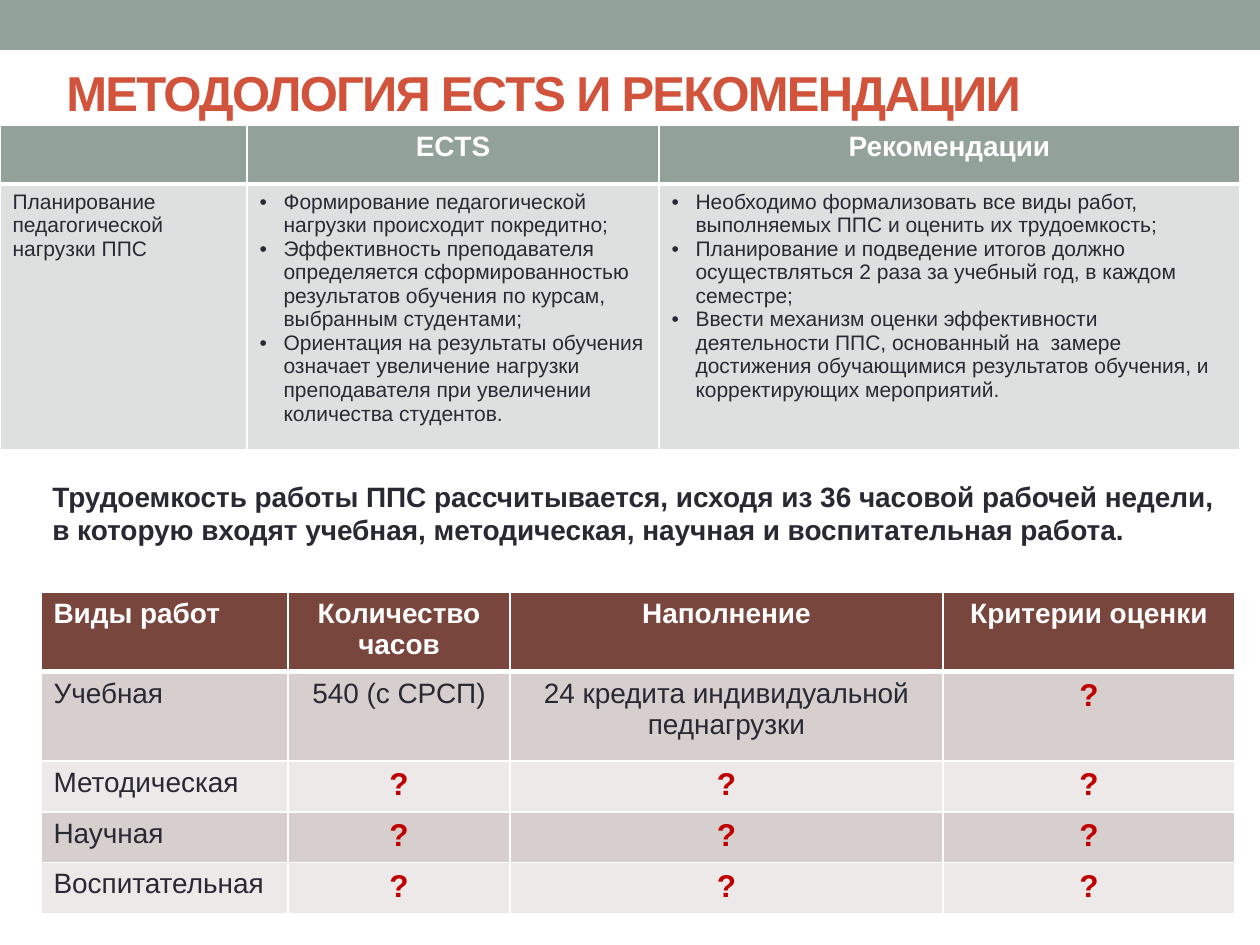
from lxml import etree
from pptx import Presentation
from pptx.dml.color import RGBColor
from pptx.enum.shapes import MSO_SHAPE
from pptx.enum.text import MSO_ANCHOR, PP_ALIGN
from pptx.oxml.ns import qn
from pptx.util import Pt

RECT = MSO_SHAPE.RECTANGLE
MIDDLE, TOP = MSO_ANCHOR.MIDDLE, MSO_ANCHOR.TOP
LEFT, CENTER = PP_ALIGN.LEFT, PP_ALIGN.CENTER

WHITE = RGBColor(0xFF, 0xFF, 0xFF)
SAGE = RGBColor(0x93, 0xA2, 0x99)
MIST = RGBColor(0xDC, 0xE0, 0xDE)
INK = RGBColor(0x29, 0x29, 0x34)
RUST = RGBColor(0xD2, 0x53, 0x3C)
BROWN = RGBColor(0x79, 0x46, 0x3D)
ROSE = RGBColor(0xD7, 0xCF, 0xCE)
PALE = RGBColor(0xEC, 0xE9, 0xE8)
RED = RGBColor(0xC0, 0x00, 0x00)

PX = 914400 / 126

# Font formats
BASE = {"name": "Arial", "size": Pt(16), "bold": False, "color": INK}
TITLE = {**BASE, "size": Pt(28), "bold": True, "color": RUST}
HEAD = {**BASE, "bold": True, "color": WHITE}
SMALL = {**BASE, "size": Pt(12)}
NOTE = {**BASE, "bold": True}
MARK = {**BASE, "size": Pt(18), "bold": True, "color": RED}

PLAN = [
    ["", "ECTS", "Рекомендации"],
    ["Планирование педагогической нагрузки ППС",
     ["Формирование педагогической нагрузки происходит покредитно;",
      "Эффективность преподавателя определяется сформированностью "
      "результатов обучения по курсам, выбранным студентами;",
      "Ориентация на результаты обучения означает увеличение нагрузки "
      "преподавателя при увеличении количества студентов."],
     ["Необходимо формализовать все виды работ, выполняемых ППС и оценить "
      "их трудоемкость;",
      "Планирование и подведение итогов должно осуществляться 2 раза за "
      "учебный год, в каждом семестре;",
      "Ввести механизм оценки эффективности деятельности ППС, основанный на  "
      "замере достижения обучающимися результатов обучения, и "
      "корректирующих мероприятий."]],
]
WORK = [
    ["Виды работ", "Количество часов", "Наполнение", "Критерии оценки"],
    ["Учебная", "540 (с СРСП)", "24 кредита индивидуальной педнагрузки", "?"],
    *[[kind, "?", "?", "?"]
      for kind in ("Методическая", "Научная", "Воспитательная")],
]


def px(*sizes):
    return [round(size * PX) for size in sizes]


def write(para, text, style, align=LEFT):
    para.alignment = align
    run = para.add_run()
    run.text = text
    for key, value in style.items():
        if key == "color":
            run.font.color.rgb = value
        else:
            setattr(run.font, key, value)
    return run


def bullet(para):
    props = para._p.get_or_add_pPr()
    indent = px(24)[0]
    props.set("marL", str(indent))
    props.set("indent", str(-indent))
    etree.SubElement(props, qn("a:buFont")).set("typeface", "Arial")
    etree.SubElement(props, qn("a:buChar")).set("char", "•")


def border(cell, base):
    """Draw white cell lines, with the bottom one of the given width."""
    props = cell._tc.get_or_add_tcPr()
    widths = {"a:lnL": 1, "a:lnR": 1, "a:lnT": 1, "a:lnB": base}
    for spot, (tag, width) in enumerate(widths.items()):
        line = etree.Element(qn(tag), w=str(Pt(width)))
        fill = etree.SubElement(line, qn("a:solidFill"))
        etree.SubElement(fill, qn("a:srgbClr")).set("val", str(WHITE))
        props.insert(spot, line)


def band(slide, box):
    bar = slide.shapes.add_shape(RECT, *px(*box))
    bar.shadow.inherit = False
    bar.fill.solid()
    bar.fill.fore_color.rgb = SAGE
    bar.line.fill.background()


def label(slide, box, text, style, anchor=TOP):
    frame = slide.shapes.add_textbox(*px(*box)).text_frame
    frame.word_wrap = True
    frame.vertical_anchor = anchor
    return write(frame.paragraphs[0], text, style)


def grid(slide, spot, cols, rows, data, fills, body):
    """Build a table with a header row; fills holds one colour per row."""
    box = px(*spot, sum(cols), sum(rows))
    table = slide.shapes.add_table(len(rows), len(cols), *box).table
    for part, sizes in ((table.columns, cols), (table.rows, rows)):
        key = "width" if part is table.columns else "height"
        for item, size in zip(part, px(*sizes)):
            setattr(item, key, size)
    for r, line in enumerate(data):
        for c, entry in enumerate(line):
            cell = table.cell(r, c)
            cell.fill.solid()
            cell.fill.fore_color.rgb = fills[r]
            border(cell, 1 if r else 3)
            style = HEAD if r == 0 else MARK if entry == "?" else body
            frame = cell.text_frame
            if isinstance(entry, list):
                for i, text in enumerate(entry):
                    para = frame.add_paragraph() if i else frame.paragraphs[0]
                    write(para, text, style)
                    bullet(para)
            elif entry:
                align = CENTER if c else LEFT
                write(frame.paragraphs[0], entry, style, align)


def main():
    deck = Presentation()
    deck.slide_width, deck.slide_height = px(1260, 945)
    slide = deck.slides.add_slide(deck.slide_layouts[6])

    # Top band and comparison table
    band(slide, (0, 0, 1260, 50))
    grid(slide, (0, 125), (247, 412, 581), (59, 266), PLAN,
         (SAGE, MIST), SMALL)

    # Title with tight letter spacing
    title = label(slide, (54, 37, 1134, 110),
                  "МЕТОДОЛОГИЯ ECTS И РЕКОМЕНДАЦИИ", TITLE, MIDDLE)
    title.font._element.set("spc", "-100")

    # Workload statement
    label(slide, (40, 473, 1194, 81),
          "Трудоемкость работы ППС рассчитывается, исходя из 36 часовой "
          "рабочей недели, в которую входят учебная, методическая, научная "
          "и воспитательная работа.", NOTE)

    # Workload table
    grid(slide, (41, 592), (247, 222, 433, 292), (79, 89, 51, 50, 51), WORK,
         (BROWN, ROSE, PALE, ROSE, PALE), BASE)

    deck.save("out.pptx")


if __name__ == "__main__":
    main()
